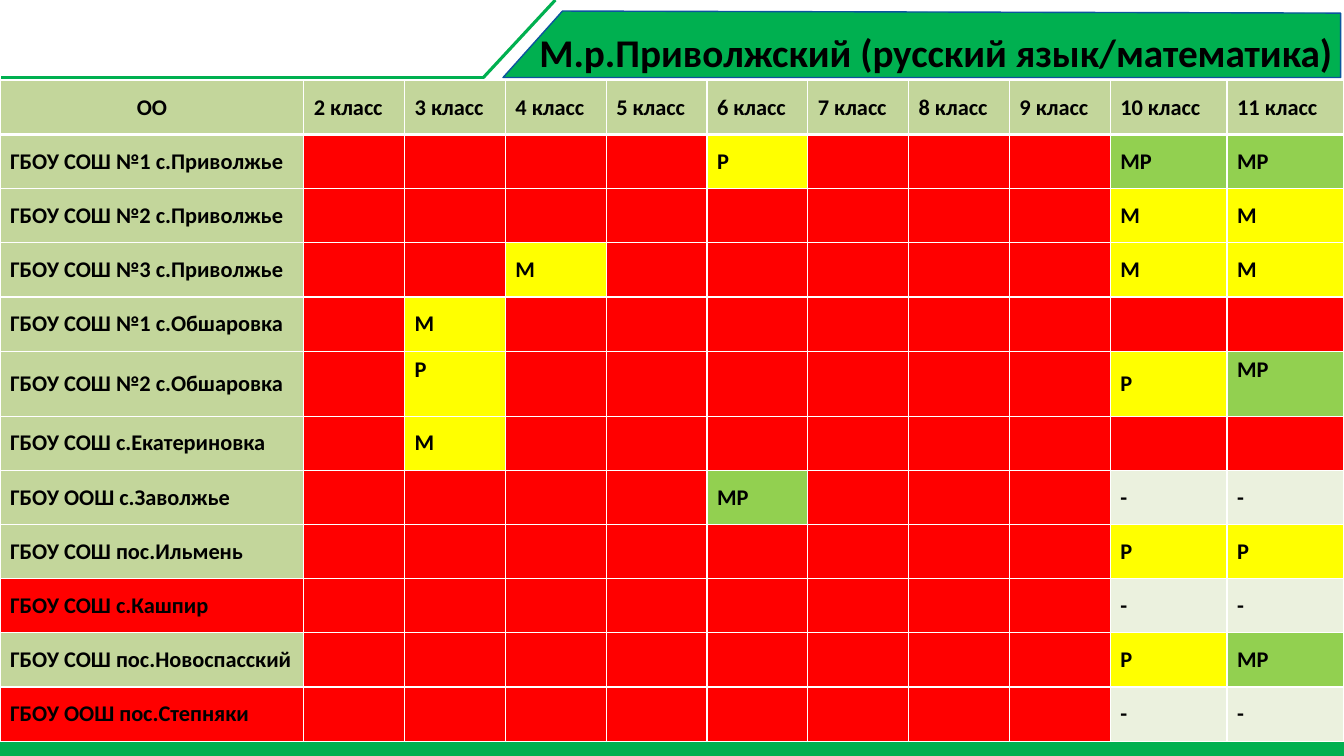
from dataclasses import dataclass, field

from lxml import etree
from pptx import Presentation
from pptx.dml.color import RGBColor
from pptx.enum.shapes import MSO_CONNECTOR, MSO_SHAPE
from pptx.enum.text import MSO_ANCHOR, MSO_AUTO_SIZE, PP_ALIGN
from pptx.oxml.ns import qn
from pptx.util import Pt

LEFT, CENTER = PP_ALIGN.LEFT, PP_ALIGN.CENTER
TOP, MIDDLE = MSO_ANCHOR.TOP, MSO_ANCHOR.MIDDLE
NO_FIT = MSO_AUTO_SIZE.NONE
RECT = MSO_SHAPE.RECTANGLE
STRAIGHT = MSO_CONNECTOR.STRAIGHT

WIDTH, HEIGHT = 960, 540
GREEN, BLUE, WHITE, BLACK = "00B050", "0C549E", "FFFFFF", "000000"
OLIVE, RED = "C3D69B", "FF0000"
FILLS = {"": RED, "М": "FFFF00", "Р": "FFFF00", "МР": "92D050", "-": "EBF1DE"}

GRADES = range(2, 12)
COLS = [217] + [72] * 8 + [83.5] * 2
ROW, TALL = 38.7, 46.4


@dataclass
class School:
    name: str
    marks: dict[int, str] = field(default_factory=dict)
    fill: str = OLIVE
    height: float = ROW
    raised: tuple[int, ...] = ()  # grades whose mark sits at the cell top


@dataclass
class Rule:
    start: tuple[float, float]
    end: tuple[float, float]


SCHOOLS = [
    School("ГБОУ СОШ №1 с.Приволжье", {6: "Р", 10: "МР", 11: "МР"}),
    School("ГБОУ СОШ №2 с.Приволжье", {10: "М", 11: "М"}),
    School("ГБОУ СОШ №3 с.Приволжье", {4: "М", 10: "М", 11: "М"}),
    School("ГБОУ СОШ №1 с.Обшаровка", {3: "М"}),
    School("ГБОУ СОШ №2 с.Обшаровка", {3: "Р", 10: "Р", 11: "МР"},
           height=TALL, raised=(3, 11)),
    School("ГБОУ СОШ с.Екатериновка", {3: "М"}),
    School("ГБОУ ООШ с.Заволжье", {6: "МР", 10: "-", 11: "-"}),
    School("ГБОУ СОШ пос.Ильмень", {10: "Р", 11: "Р"}),
    School("ГБОУ СОШ с.Кашпир", {10: "-", 11: "-"}, fill=RED),
    School("ГБОУ СОШ пос.Новоспасский", {10: "Р", 11: "МР"}),
    School("ГБОУ ООШ пос.Степняки", {10: "-", 11: "-"}, fill=RED),
]
BANNER = [(401.8, 7.9), (957.6, 9.4), (957.6, 55.4), (359.3, 55.4)]
RULES = [Rule((396.7, 0), (345.2, 55.5)), Rule((345.6, 55.5), (0.7, 55.5))]


def color(code: str) -> RGBColor:
    return RGBColor.from_string(code)


def paint(item, code: str) -> None:
    item.fill.solid()
    item.fill.fore_color.rgb = color(code)


def write(frame, text: str, *, size: float = 16, align=LEFT, anchor=MIDDLE) -> None:
    frame.text = text
    frame.vertical_anchor = anchor
    para = frame.paragraphs[0]
    para.alignment = align
    font = para.runs[0].font
    font.name, font.size, font.bold = "Calibri", Pt(size), True
    font.color.rgb = color(BLACK)


def border(cell, top: float, bottom: float) -> None:
    """Put white edges around a cell, ahead of its fill."""
    props = cell._tc.get_or_add_tcPr()
    widths = {"a:lnL": 1, "a:lnR": 1, "a:lnT": top, "a:lnB": bottom}
    for spot, (tag, width) in enumerate(widths.items()):
        edge = etree.Element(qn(tag), w=str(Pt(width)))
        fill = etree.SubElement(edge, qn("a:solidFill"))
        etree.SubElement(fill, qn("a:srgbClr"), val=WHITE)
        props.insert(spot, edge)


def draw_frame(shapes) -> None:
    """Draw the banner, the foot bar and the two green rules."""
    pen = shapes.build_freeform(*map(Pt, BANNER[0]))
    pen.add_line_segments([(Pt(x), Pt(y)) for x, y in BANNER[1:]], close=True)
    banner = pen.convert_to_shape()
    banner.shadow.inherit = False
    paint(banner, GREEN)
    banner.line.color.rgb = color(BLUE)
    banner.line.width = Pt(1)

    foot = shapes.add_shape(RECT, 0, Pt(525.6), Pt(WIDTH), Pt(HEIGHT - 525.6))
    foot.shadow.inherit = False
    paint(foot, GREEN)
    foot.line.fill.background()

    for rule in RULES:
        line = shapes.add_connector(STRAIGHT, *map(Pt, rule.start + rule.end))
        line.line.color.rgb = color(GREEN)
        line.line.width = Pt(2.25)
        etree.SubElement(line._element.spPr, qn("a:effectLst"))


def draw_table(shapes) -> None:
    heights = [ROW] + [school.height for school in SCHOOLS]
    table = shapes.add_table(len(heights), len(COLS), 0, Pt(57.4),
                             Pt(sum(COLS)), Pt(sum(heights))).table
    table.horz_banding = False
    for col, width in zip(table.columns, COLS):
        col.width = Pt(width)
    for row, height in zip(table.rows, heights):
        row.height = Pt(height)

    for at, text in enumerate(["ОО"] + [f"{grade} класс" for grade in GRADES]):
        cell = table.cell(0, at)
        paint(cell, OLIVE)
        border(cell, 1, 3)
        write_cell(cell, text, align=LEFT if at else CENTER)

    for line, school in enumerate(SCHOOLS, 1):
        top = 3 if line == 1 else 1
        label = table.cell(line, 0)
        paint(label, school.fill)
        border(label, top, 1)
        write_cell(label, school.name)
        for at, grade in enumerate(GRADES, 1):
            mark = school.marks.get(grade, "")
            cell = table.cell(line, at)
            paint(cell, FILLS[mark])
            border(cell, top, 1)
            if mark:
                write_cell(cell, mark, anchor=TOP if grade in school.raised else MIDDLE)


def write_cell(cell, text: str, *, align=LEFT, anchor=MIDDLE) -> None:
    """Write in a cell, whose anchor belongs to the cell itself."""
    write(cell.text_frame, text, align=align)
    cell.vertical_anchor = anchor


def draw_title(shapes) -> None:
    title = shapes.title
    title.left, title.top = Pt(378), Pt(16.6)
    title.width, title.height = Pt(588.2), Pt(41)
    frame = title.text_frame
    frame.word_wrap = True
    frame.auto_size = NO_FIT
    write(frame, "М.р.Приволжский (русский язык/математика)", size=28, anchor=TOP)
    shapes._spTree.append(title._element)  # bring above the banner


def main() -> None:
    deck = Presentation()
    deck.slide_width, deck.slide_height = Pt(WIDTH), Pt(HEIGHT)
    shapes = deck.slides.add_slide(deck.slide_layouts.get_by_name("Title Only")).shapes
    draw_frame(shapes)
    draw_table(shapes)
    draw_title(shapes)
    deck.save("out.pptx")


if __name__ == "__main__":
    main()
